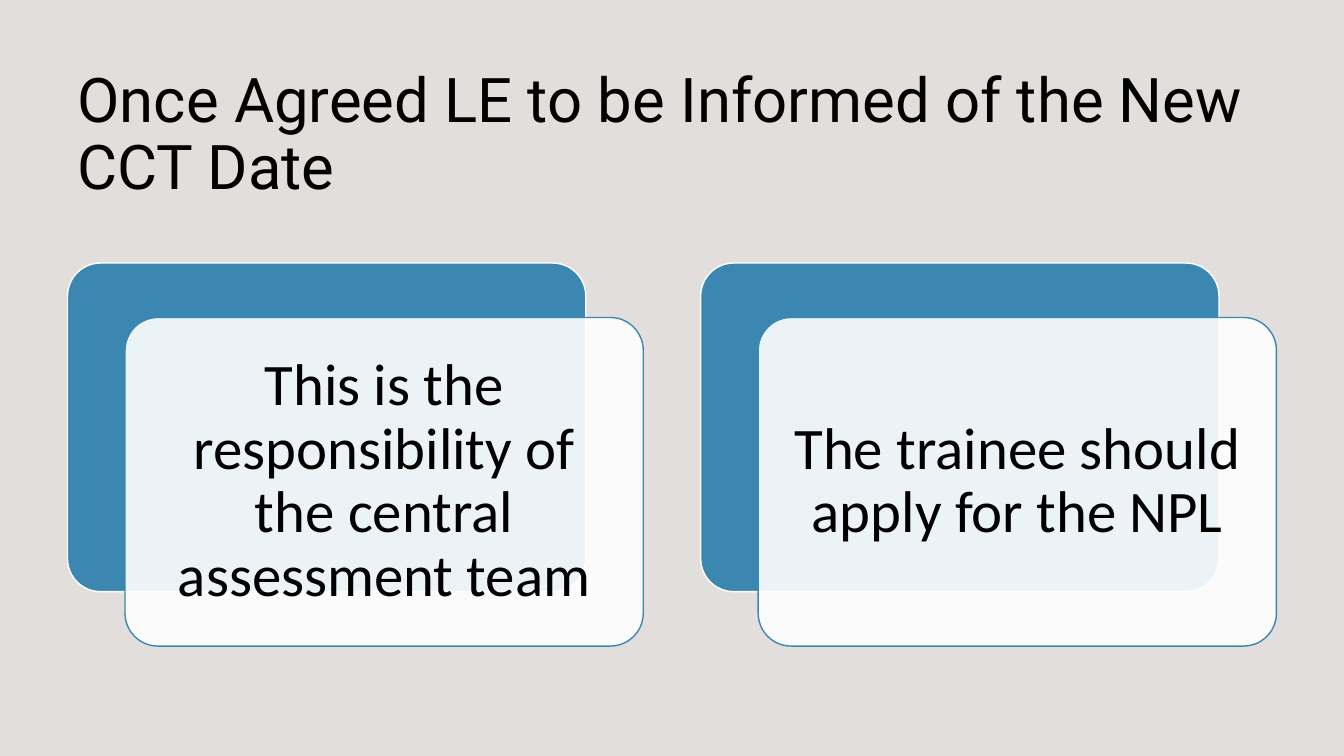
"""Build the slide on informing the LE of the new CCT date."""
from dataclasses import dataclass

from lxml import etree
from pptx import Presentation
from pptx.dml.color import RGBColor
from pptx.enum import shapes, text
from pptx.oxml.ns import qn
from pptx.util import Inches, Pt

COLORS = {"back": "E8E4E2", "veil": "AEAEAE", "blue": "3B87B1",
          "white": "FFFFFF", "ink": "000000"}
CARD_W, CARD_H = 5.14, 3.26
CARD_TOP, CARD_LEFT, CARD_STEP = 2.61, 0.67, 6.28
FRONT_DX, FRONT_DY = 0.57, 0.54


@dataclass
class Box:
    left: float
    top: float
    width: float
    height: float
    fill: str
    line: str | None = None
    opacity: int = 100
    rounded: bool = False


def rgb(name: str) -> RGBColor:
    return RGBColor.from_string(COLORS[name])


def draw_box(slide, box: Box):
    kind = shapes.MSO_SHAPE.ROUNDED_RECTANGLE if box.rounded else shapes.MSO_SHAPE.RECTANGLE
    sp = slide.shapes.add_shape(kind, Inches(box.left), Inches(box.top),
                                Inches(box.width), Inches(box.height))
    sp.shadow.inherit = False
    if box.rounded:
        sp.adjustments[0] = 0.1
    sp.fill.solid()
    sp.fill.fore_color.rgb = rgb(box.fill)
    if box.opacity < 100:
        color = sp.fill._xPr.find(f"{qn('a:solidFill')}/{qn('a:srgbClr')}")
        etree.SubElement(color, qn("a:alpha"), val=str(box.opacity * 1000))
    if box.line:
        sp.line.color.rgb = rgb(box.line)
        sp.line.width = Pt(1)
    else:
        sp.line.fill.background()
    return sp


def write(sp, words: str, font: str, size: int, align, anchor) -> None:
    tf = sp.text_frame
    tf.word_wrap = True
    tf.auto_size = text.MSO_AUTO_SIZE.NONE
    tf.vertical_anchor = anchor
    p = tf.paragraphs[0]
    p.alignment = align
    p.line_spacing = 0.9
    r = p.add_run()
    r.text = words
    r.font.name = font
    r.font.size = Pt(size)
    r.font.color.rgb = rgb("ink")


def draw_card(slide, left: float, words: str) -> None:
    draw_box(slide, Box(left, CARD_TOP, CARD_W, CARD_H, "blue", "white", rounded=True))
    sp = draw_box(slide, Box(left + FRONT_DX, CARD_TOP + FRONT_DY, CARD_W, CARD_H,
                             "white", "blue", opacity=90, rounded=True))
    tf = sp.text_frame
    tf.margin_left = tf.margin_right = tf.margin_top = tf.margin_bottom = Inches(0.17)
    write(sp, words, "Calibri", 42, text.PP_ALIGN.CENTER, text.MSO_ANCHOR.MIDDLE)


def main() -> None:
    prs = Presentation()
    prs.slide_width, prs.slide_height = Inches(13.33), Inches(7.5)
    slide = prs.slides.add_slide(prs.slide_layouts[5])
    slide.background.fill.solid()
    slide.background.fill.fore_color.rgb = rgb("back")
    veil = draw_box(slide, Box(0, 0, 13.33, 7.5, "veil", opacity=10))

    title = slide.shapes.title
    veil._element.addnext(title._element)
    title.left, title.top = Inches(0.67), Inches(0.61)
    title.width, title.height = Inches(12), Inches(1.45)
    write(title, "Once Agreed LE to be Informed of the New CCT Date", "Roboto", 44,
          text.PP_ALIGN.LEFT, text.MSO_ANCHOR.BOTTOM)

    cards = ["This is the responsibility of the central assessment team",
             "The trainee should apply for the NPL"]
    for i, words in enumerate(cards):
        draw_card(slide, CARD_LEFT + i * CARD_STEP, words)
    prs.save("out.pptx")


if __name__ == "__main__":
    main()
